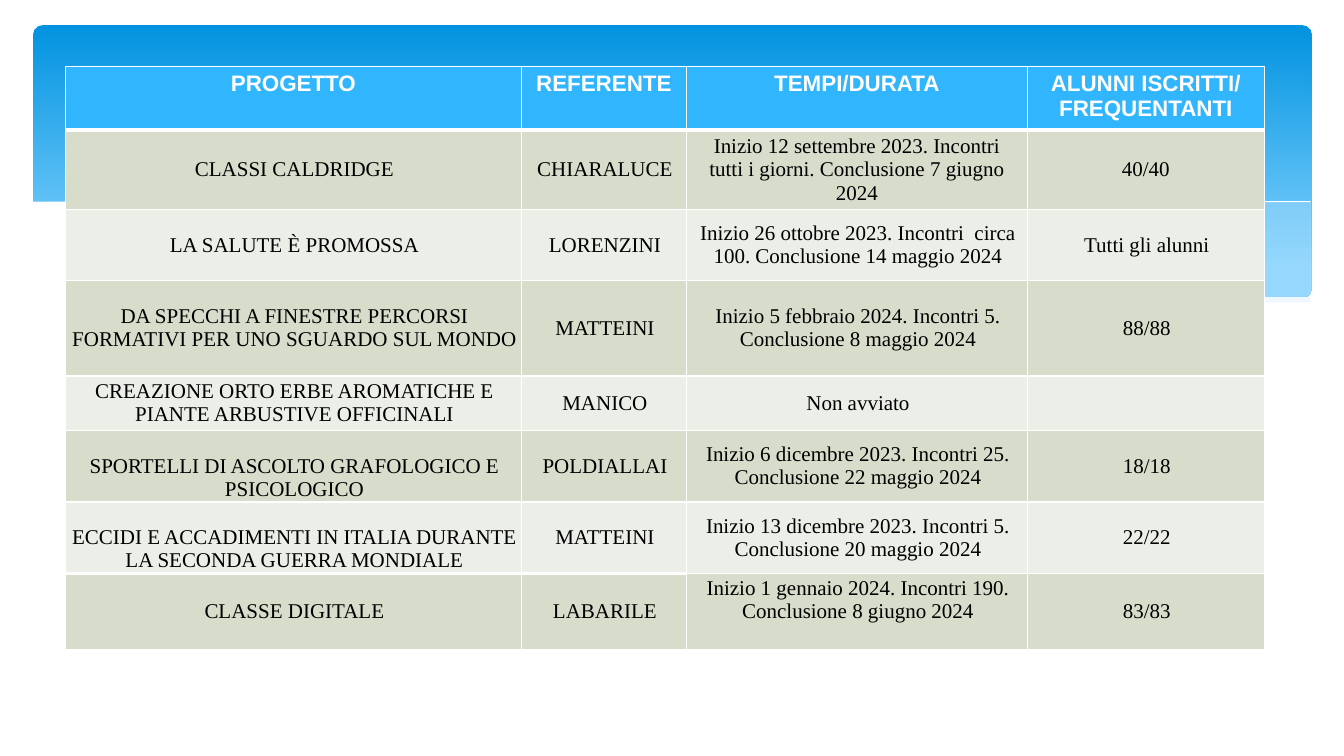
import pptx
import pptx.dml.color
import pptx.enum.shapes
import pptx.enum.text
import pptx.oxml
import pptx.oxml.ns
import pptx.util
from pptx.util import Inches

WHITE = "FFFFFF"
GREENS = ("D8DDCB", "ECEFE7")
MID = pptx.enum.text.MSO_ANCHOR.MIDDLE
TOP = pptx.enum.text.MSO_ANCHOR.TOP
WIDTHS = (4.52, 1.64, 3.38, 2.35)
HEIGHTS = (0.63, 0.79, 0.7, 0.95, 0.54, 0.71, 0.71, 0.76)
ROWS = (
    ("PROGETTO", "REFERENTE", "TEMPI/DURATA", "ALUNNI ISCRITTI/\nFREQUENTANTI"),
    ("CLASSI CALDRIDGE", "CHIARALUCE",
     "Inizio 12 settembre 2023. Incontri tutti i giorni. Conclusione 7 giugno 2024", "40/40"),
    ("LA SALUTE È PROMOSSA", "LORENZINI",
     "Inizio 26 ottobre 2023. Incontri  circa 100. Conclusione 14 maggio 2024",
     "Tutti gli alunni"),
    ("DA SPECCHI A FINESTRE PERCORSI FORMATIVI PER UNO SGUARDO SUL MONDO", "MATTEINI",
     "Inizio 5 febbraio 2024. Incontri 5. Conclusione 8 maggio 2024", "88/88"),
    ("CREAZIONE ORTO ERBE AROMATICHE E PIANTE ARBUSTIVE OFFICINALI", "MANICO",
     "Non avviato", ""),
    ("SPORTELLI DI ASCOLTO GRAFOLOGICO E PSICOLOGICO", "POLDIALLAI",
     "Inizio 6 dicembre 2023. Incontri 25. Conclusione 22 maggio 2024", "18/18"),
    ("ECCIDI E ACCADIMENTI IN ITALIA DURANTE LA SECONDA GUERRA MONDIALE", "MATTEINI",
     "Inizio 13 dicembre 2023. Incontri 5. Conclusione 20 maggio 2024", "22/22"),
    ("CLASSE DIGITALE", "LABARILE",
     "Inizio 1 gennaio 2024. Incontri 190. Conclusione 8 giugno 2024", "83/83"),
)
PADS = {(1, 2): (0.05, 0.05), (5, 0): (0.24, 0.01), (6, 0): (0.24, 0.01),
        (7, 2): (0.01, 0.24)}

RIGHT = ((13.01, 2), (12.65, 2.04), (12.27, 2.1), (11.88, 2.16), (11.47, 2.23),
         (10.73, 2.37), (10.05, 2.48), (9.41, 2.57), (8.82, 2.65), (9.21, 2.69),
         (9.76, 2.74), (10.25, 2.77), (10.85, 2.78), (11.38, 2.76), (11.86, 2.72),
         (12.28, 2.65), (12.66, 2.57), (13.01, 2.47))
LEFT = ((11.9, 2.73), (11.16, 2.65), (10.34, 2.54), (9.41, 2.4), (8.39, 2.22),
        (7.78, 2.11), (7.21, 2.03), (6.69, 1.96), (6.19, 1.91), (5.6, 1.87),
        (5.06, 1.85), (4.59, 1.86), (4.18, 1.88), (3.82, 1.91), (4.56, 1.99),
        (5.39, 2.11), (5.99, 2.22), (7.06, 2.4), (8.02, 2.55), (8.87, 2.66),
        (9.63, 2.74), (10.3, 2.77), (10.9, 2.78), (11.43, 2.77))
FALL = ((4.12, 1.95), (4.58, 1.9), (5.16, 1.87), (5.77, 1.87), (6.52, 1.9),
        (7.42, 1.97), (8.48, 2.08), (9.7, 2.26), (10.6, 2.41), (12.1, 2.72))
RISE = ((8.18, 2.57), (8.96, 2.41), (9.97, 2.23), (10.75, 2.1), (11.55, 1.99),
        (12.13, 1.92), (12.67, 1.87), (13, 1.85))
FRONT = ((13.03, 2.46), (12.66, 2.56), (12.27, 2.65), (11.83, 2.71), (11.34, 2.75),
         (10.78, 2.77), (10.15, 2.75), (9.44, 2.7), (8.63, 2.62), (7.72, 2.5),
         (6.71, 2.33), (5.58, 2.13), (4.86, 2.02), (4.21, 1.94), (3.61, 1.88),
         (3.06, 1.85), (2.58, 1.84), (2.14, 1.84), (1.76, 1.86), (1.42, 1.89),
         (1.13, 1.93), (0.89, 1.97), (0.69, 2.01), (0.54, 2.05), (0.31, 2.13),
         (0.31, 3.29), (13.03, 3.29))


def tint(color, code):
    """Set a colour from a hex string."""
    color.rgb = pptx.dml.color.RGBColor.from_string(code)


def add_band(slide):
    """Draw the rounded blue band."""
    band = slide.shapes.add_shape(pptx.enum.shapes.MSO_SHAPE.ROUNDED_RECTANGLE,
                                  Inches(0.33), Inches(0.25), Inches(12.68), Inches(2.7))
    band.adjustments[0] = 0.034
    band.shadow.inherit = False
    band.line.fill.background()
    band.fill.gradient()
    band.fill.gradient_angle = 270
    for stop, code, place in zip(band.fill.gradient_stops, ("0293E0", "83D3FE"), (0, 0.9)):
        tint(stop.color, code)
        stop.position = place


def add_wave(slide, points, fill=None, alpha=100):
    """Draw a filled wave, or a thin white curve when no fill is given."""
    pen = slide.shapes.build_freeform(*points[0], scale=Inches(1))
    pen.add_line_segments(points[1:], close=fill is not None)
    wave = pen.convert_to_shape()
    wave.shadow.inherit = False
    if fill is None:
        wave.fill.background()
        wave.line.width = 0
        tint(wave.line.color, WHITE)
        return
    wave.line.fill.background()
    wave.fill.solid()
    tint(wave.fill.fore_color, fill)
    if alpha < 100:
        shade = wave.fill._xPr.find(".//" + pptx.oxml.ns.qn("a:srgbClr"))
        shade.append(pptx.oxml.parse_xml(
            f'<a:alpha {pptx.oxml.ns.nsdecls("a")} val="{alpha * 1000}"/>'))


def write(frame, text, size=15, font="Times New Roman", color="000000", bold=False):
    """Put centred text in a frame."""
    frame.text = text
    for para in frame.paragraphs:
        para.alignment = pptx.enum.text.PP_ALIGN.CENTER
        para.font.size = pptx.util.Pt(size)
        for run in para.runs:
            run.font.size = pptx.util.Pt(size)
            run.font.name = font
            run.font.bold = bold
            tint(run.font.color, color)


def edge(cell, top=1, base=1):
    """Give a cell white borders with set top and bottom widths."""
    props = cell._tc.get_or_add_tcPr()
    for side, width in zip("LRTB", (1, 1, top, base)):
        props.append(pptx.oxml.parse_xml(
            f'<a:ln{side} {pptx.oxml.ns.nsdecls("a")} w="{pptx.util.Pt(width)}"><a:solidFill>'
            f'<a:srgbClr val="{WHITE}"/></a:solidFill></a:ln{side}>'))


def style(cell, fill, pads, sides, anchor):
    """Set the fill, margins and anchor of a cell."""
    cell.fill.solid()
    tint(cell.fill.fore_color, fill)
    cell.margin_top, cell.margin_bottom = map(Inches, pads)
    cell.margin_left, cell.margin_right = map(Inches, sides)
    cell.vertical_anchor = anchor


def add_grid(slide):
    """Build the table of projects."""
    grid = slide.shapes.add_table(len(ROWS), len(WIDTHS), Inches(0.65), Inches(0.66),
                                  Inches(sum(WIDTHS)), Inches(sum(HEIGHTS))).table
    grid.first_row = grid.horz_banding = False
    for col, width in zip(grid.columns, WIDTHS):
        col.width = Inches(width)
    for r, (height, texts) in enumerate(zip(HEIGHTS, ROWS)):
        grid.rows[r].height = Inches(height)
        for c, text in enumerate(texts):
            cell = grid.cell(r, c)
            edge(cell, top=3 if r == 1 or (r == 7 and c < 2) else 1,
                 base=3 if r == 0 or (r == 6 and c < 2) else 1)
            if r == 0:
                style(cell, "31B6FD", (0.05, 0.05), (0.1, 0.1), TOP)
                write(cell.text_frame, text, size=16, font="Arial", color=WHITE, bold=True)
            else:
                sides = (0.1, 0.1) if r == 1 and c > 1 else (0.04, 0.02)
                style(cell, GREENS[(r - 1) % 2], PADS.get((r, c), (0.01, 0.01)), sides, MID)
                write(cell.text_frame, text)


def main():
    """Build and save the slide."""
    deck = pptx.Presentation()
    deck.slide_width, deck.slide_height = Inches(13.33), Inches(7.5)
    slide = deck.slides.add_slide(deck.slide_layouts[6])
    add_band(slide)
    add_wave(slide, RIGHT, "C6E7FC", 29)
    add_wave(slide, LEFT, "C6E7FC", 40)
    add_wave(slide, FALL)
    add_wave(slide, RISE)
    add_wave(slide, FRONT, WHITE)
    add_grid(slide)
    deck.save("out.pptx")


if __name__ == "__main__":
    main()
